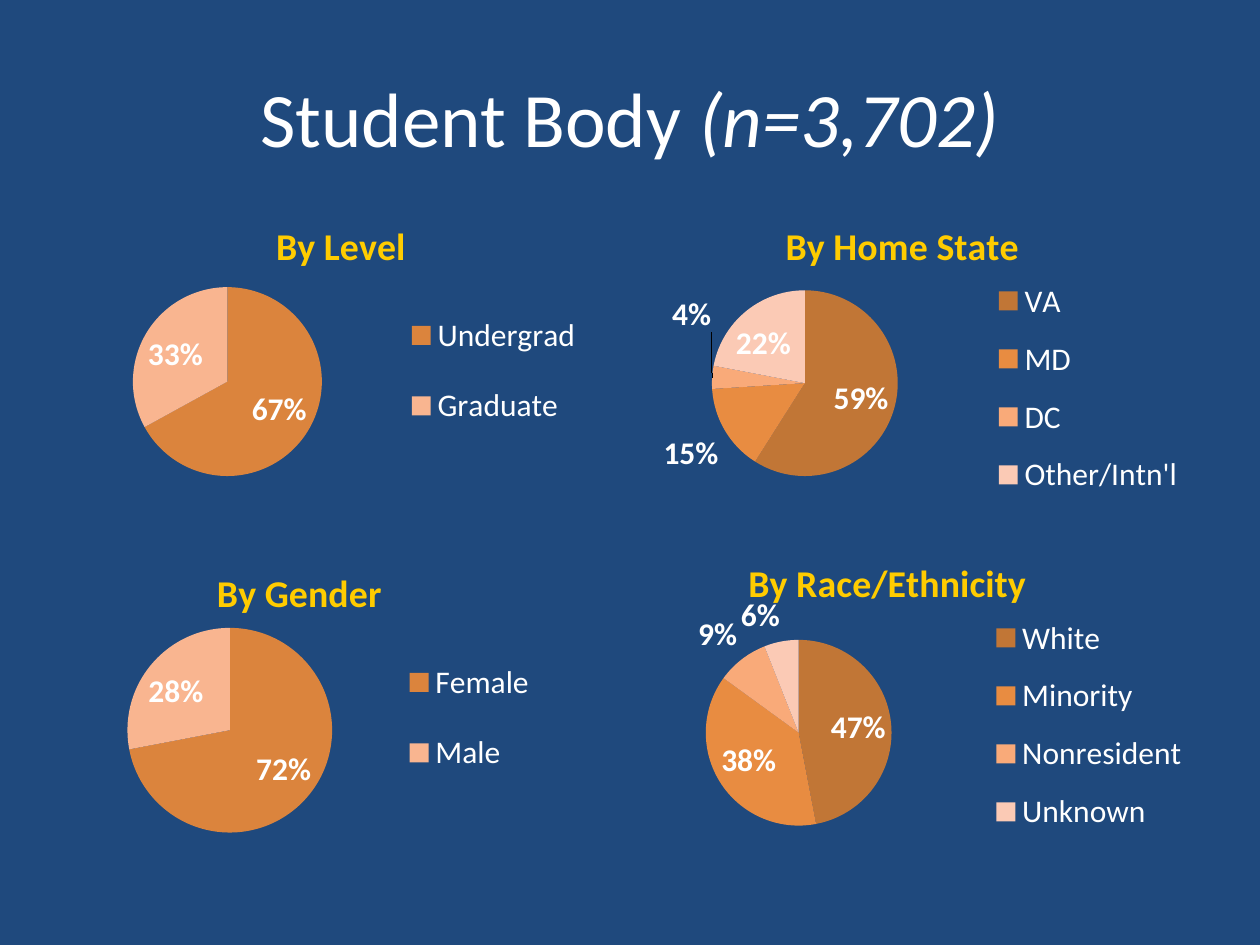
from lxml.etree import SubElement
from pptx import Presentation
from pptx.chart.data import CategoryChartData
from pptx.dml.color import RGBColor
from pptx.enum.chart import XL_CHART_TYPE, XL_LABEL_POSITION, XL_LEGEND_POSITION
from pptx.enum.text import MSO_ANCHOR, PP_ALIGN
from pptx.oxml.ns import qn
from pptx.util import Emu, Pt

NAVY = RGBColor(0x1F, 0x49, 0x7D)
WHITE = RGBColor(0xFF, 0xFF, 0xFF)
GOLD = RGBColor(0xFF, 0xCC, 0x00)
TWO_SHADES = [RGBColor(0xDB, 0x84, 0x3D), RGBColor(0xF9, 0xB5, 0x90)]
FOUR_SHADES = [RGBColor(0xC1, 0x76, 0x36), RGBColor(0xE8, 0x8C, 0x41),
               RGBColor(0xF9, 0xAA, 0x79), RGBColor(0xFB, 0xCA, 0xB5)]
PX_PER_INCH = 126


def px(length):
    return Emu(round(length * 914400 / PX_PER_INCH))


def set_format(font, size, color=WHITE, **values):
    for name, value in dict(name="Calibri", size=Pt(size), **values).items():
        setattr(font, name, value)
    font.color.rgb = color


def place(parent, index, **values):
    """Give a chart part a manual layout, as fractions of the chart."""
    for old in parent.findall(qn("c:layout")):
        parent.remove(old)
    layout = SubElement(parent, qn("c:layout"))
    parent.insert(index, layout)
    manual = SubElement(layout, qn("c:manualLayout"))
    for tag, value in values.items():
        SubElement(manual, qn(f"c:{tag}")).set("val", str(value))


def box(x, y, w, h):
    return dict(xMode="edge", yMode="edge", x=x, y=y, w=w, h=h)


class StudentSlide:
    def __init__(self, deck):
        self.slide = deck.slides.add_slide(deck.slide_layouts[6])
        fill = self.slide.background.fill
        fill.solid()
        fill.fore_color.rgb = NAVY

    def heading(self, frame, parts):
        text = self.slide.shapes.add_textbox(*map(px, frame)).text_frame
        text.word_wrap = True
        text.vertical_anchor = MSO_ANCHOR.MIDDLE
        line = text.paragraphs[0]
        line.alignment = PP_ALIGN.CENTER
        for wording, italic in parts:
            run = line.add_run()
            run.text = wording
            set_format(run.font, 44, italic=italic)

    def pie(self, title, frame, shares, shades, plot_box, legend_box):
        data = CategoryChartData(number_format="0%")
        data.categories = list(shares)
        data.add_series("Series 1", list(shares.values()))
        chart = self.slide.shapes.add_chart(
            XL_CHART_TYPE.PIE, *map(px, frame), data).chart
        set_format(chart.font, 18)

        # Title
        chart.has_title = True
        chart.chart_title.include_in_layout = False
        line = chart.chart_title.text_frame.paragraphs[0]
        run = line.add_run()
        run.text = title
        set_format(run.font, 21.6, GOLD, bold=True)

        # Legend
        chart.has_legend = True
        legend = chart.legend
        legend.position = XL_LEGEND_POSITION.RIGHT
        legend.include_in_layout = False
        set_format(legend.font, 18)
        place(legend._element, 1, **box(*legend_box))

        # Slices and their labels
        plot = chart.plots[0]
        plot.vary_by_categories = True
        place(chart._chartSpace.chart.plotArea, 0,
              layoutTarget="inner", **box(*plot_box))
        for index, shade in enumerate(shades):
            fill = plot.series[0].points[index].format.fill
            fill.solid()
            fill.fore_color.rgb = shade
        labels = plot.series[0].data_labels
        for name, value in dict(show_value=True, number_format="0%",
                                number_format_is_linked=False,
                                position=XL_LABEL_POSITION.BEST_FIT).items():
            setattr(labels, name, value)
        set_format(labels.font, 18, bold=True)
        return chart

    def shift_label(self, chart, index, dx, dy):
        label = chart.plots[0].series[0].points[index].data_label
        set_format(label.font, 18, bold=True)
        label.position = XL_LABEL_POSITION.BEST_FIT
        place(chart._chartSpace.xpath(".//c:dLbl")[0], 1, x=dx, y=dy)


def main():
    deck = Presentation()
    deck.slide_width, deck.slide_height = px(1260), px(945)
    body = StudentSlide(deck)
    body.heading((63, 38, 1134, 157),
                 [("Student Body ", False), ("(n=3,702)", True)])

    # Left column: two-way splits
    body.pie("By Level", (42, 199, 598, 315),
             {"Undergrad": 0.67, "Graduate": 0.33}, TWO_SHADES,
             (0.05, 0.28, 0.52, 0.6), (0.6, 0.27, 0.31, 0.55))
    body.pie("By Gender", (21, 546, 557, 315),
             {"Female": 0.72, "Male": 0.28}, TWO_SHADES,
             (0.09, 0.26, 0.57, 0.65), (0.68, 0.27, 0.25, 0.55))

    # Right column: four-way splits
    body.pie("By Race/Ethnicity", (546, 536, 683, 315),
             {"White": 0.47, "Minority": 0.38, "Nonresident": 0.09,
              "Unknown": 0.06}, FOUR_SHADES,
             (0.08, 0.33, 0.58, 0.59), (0.64, 0.2, 0.31, 0.8))
    home_state = body.pie("By Home State", (577, 199, 651, 315),
                          {"VA": 0.59, "MD": 0.15, "DC": 0.04,
                           "Other/Intn'l": 0.22}, FOUR_SHADES,
                          (0.06, 0.29, 0.58, 0.59), (0.63, 0.2, 0.31, 0.8))
    body.shift_label(home_state, 2, 0.01, -0.2)

    deck.save("out.pptx")


if __name__ == "__main__":
    main()
